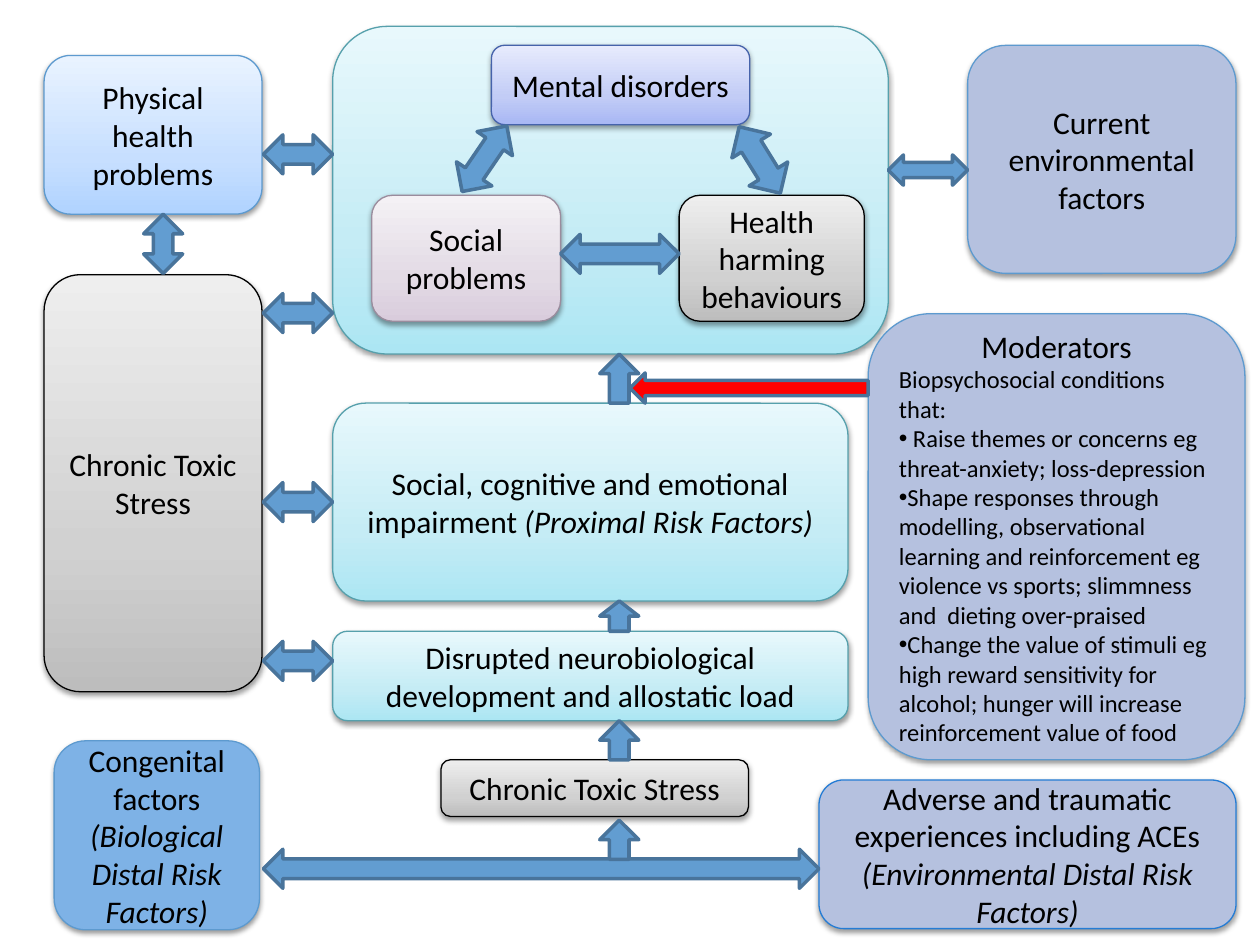
from copy import deepcopy
from lxml.etree import SubElement
from pptx import Presentation
from pptx.dml.color import RGBColor
from pptx.enum.shapes import MSO_SHAPE as Shape
from pptx.enum.text import MSO_ANCHOR as Anchor, PP_ALIGN as Align
from pptx.oxml.ns import qn
from pptx.util import Inches, Pt

COLORS = {
    "text": "000000", "arrow": "629DD1", "edge": "49749B", "red": "FF0000",
    "lilac": "B5C1DF", "sky": "7EB2E6", "blue": "5D9ACF", "deep": "247CD5",
    "teal": "56A0AC", "navy": "4663AB", "plum": "9A8C9D", "black": "000000",
}
FADES = {
    "gray": ("BDBDBD", "D1D1D1", "EEEEEE"),
    "aqua": ("ACE6F3", "C5ECF5", "E8F8FC"),
    "violet": ("A8B7F4", "C2CCF6", "E7EBFD"),
    "mauve": ("D9CCDC", "E3DBE5", "F4F1F5"),
    "ice": ("B0D3FF", "C7DFFF", "E9F3FF"),
}
STOPS = (0, 0.35, 1)

BOXES = [
    ((6.5, 6.19, 3.31, 1.18), "lilac", "deep",
     [("Adverse and traumatic experiences including ACEs ", "(Environmental Distal Risk Factors)")]),
    ((3.5, 6.03, 2.44, 0.45), "gray", "black", [("Chronic Toxic Stress",)]),
    ((2.64, 5.01, 4.09, 0.71), "aqua", "teal",
     [("Disrupted neurobiological development and allostatic load",)]),
    ((2.64, 3.2, 4.09, 1.57), "aqua", "teal",
     [("Social, cognitive and emotional impairment ", "(Proximal Risk Factors)")]),
    ((2.64, 0.21, 4.41, 2.6), "aqua", "teal", []),
    ((3.9, 0.36, 2.05, 0.63), "violet", "navy", [("Mental disorders",)]),
    ((2.95, 1.55, 1.5, 1), "mauve", "plum", [("Social problems",)]),
    ((5.39, 1.55, 1.47, 1), "gray", "black", [("Health harming behaviours",)]),
    ((0.35, 2.18, 1.73, 3.31), "gray", "black", [("Chronic Toxic",), ("Stress",)]),
    ((6.89, 2.49, 2.99, 3.54), "lilac", "blue", [("Moderators",)]),
    ((0.43, 5.88, 1.63, 1.5), "sky", "blue",
     [("Congenital factors ", "(Biological Distal Risk Factors)")]),
    ((7.68, 0.36, 2.13, 1.81), "lilac", "blue", [("Current environmental factors",)]),
    ((0.35, 0.44, 1.73, 1.26), "ice", "blue", [("Physical health problems",)]),
]
INTRO = "Biopsychosocial conditions that:"
POINTS = [
    " Raise themes or concerns eg threat-anxiety; loss-depression",
    "Shape responses through modelling, observational learning and reinforcement "
    "eg violence vs sports; slimmness and  dieting over-praised",
    "Change the value of stimuli eg high reward sensitivity for alcohol; "
    "hunger will increase reinforcement value of food",
]

RISES = [(6.51, 0.31), (5.72, 0.31), (4.77, 0.24), (2.81, 0.39)]
LINKS = [1.07, 2.33, 3.83, 5.09]
SPANS = [
    ((2.09, 6.74, 4.41, 0.31), 0),
    ((3.53, 1.09, 0.63, 0.34), 304.3),
    ((5.72, 1.09, 0.62, 0.36), 58.2),
    ((4.45, 1.86, 0.94, 0.31), 0),
    ((7.05, 1.23, 0.63, 0.24), 0),
    ((1.06, 1.78, 0.47, 0.31), 270),
]


def rgb(name):
    return RGBColor.from_string(COLORS[name])


def write(frame, text, size=18, align=Align.CENTER, bullet=None):
    para = frame.paragraphs[0]
    if para.runs:
        para = frame.add_paragraph()
    para.alignment = align
    if bullet:
        props = para._p.get_or_add_pPr()
        SubElement(props, qn("a:buFont"), typeface="Arial")
        SubElement(props, qn("a:buChar"), char=bullet)
    for part in text:
        run = para.add_run()
        run.text = part
        font = run.font
        font.name, font.size = "Calibri", Pt(size)
        font.color.rgb = rgb("text")
        if part.startswith("("):
            font.italic = True


def draw(kind, at, fill, edge, width):
    shape = slide.shapes.add_shape(kind, *map(Inches, at))
    shape.shadow.inherit = False
    if fill in FADES:
        shape.fill.gradient()
        shape.fill.gradient_angle = 90
        stops = shape._element.spPr.find(".//" + qn("a:gsLst"))
        stops.append(deepcopy(stops[0]))
        for stop, place, tone in zip(shape.fill.gradient_stops, STOPS, FADES[fill]):
            stop.position = place
            stop.color.rgb = RGBColor.from_string(tone)
    else:
        shape.fill.solid()
        shape.fill.fore_color.rgb = rgb(fill)
    shape.line.color.rgb = rgb(edge)
    shape.line.width = Pt(width)
    return shape


def shade(shape):
    effects = shape._element.spPr.find(qn("a:effectLst"))
    cast = SubElement(effects, qn("a:outerShdw"), blurRad=str(Pt(3.1)),
                      dist=str(Pt(1.6)), dir="5400000", rotWithShape="0")
    tone = SubElement(cast, qn("a:srgbClr"), val=COLORS["black"])
    SubElement(tone, qn("a:alpha"), val="38000")


def arrow(kind, at, turn=0, fill="arrow"):
    draw(kind, at, fill, "edge", 2).rotation = turn


deck = Presentation()
deck.slide_width, deck.slide_height = Inches(10), Inches(7.5)
slide = deck.slides.add_slide(deck.slide_layouts[6])

for at, fill, edge, paras in BOXES:
    box = draw(Shape.ROUNDED_RECTANGLE, at, fill, edge, 0.75)
    shade(box)
    frame = box.text_frame
    frame.word_wrap = True
    frame.vertical_anchor = Anchor.MIDDLE
    for text in paras:
        write(frame, text)
    if paras == [("Moderators",)]:
        write(frame, [INTRO], size=14, align=Align.LEFT)
        for point in POINTS:
            write(frame, [point], size=14, align=Align.LEFT, bullet="•")

for at, turn in SPANS:
    arrow(Shape.LEFT_RIGHT_ARROW, at, turn)
for top in LINKS:
    arrow(Shape.LEFT_RIGHT_ARROW, (2.09, top, 0.55, 0.31))
for top, high in RISES:
    arrow(Shape.UP_ARROW, (4.76, top, 0.31, high))
arrow(Shape.LEFT_ARROW, (5, 2.96, 1.89, 0.24), fill="red")

deck.save("out.pptx")
